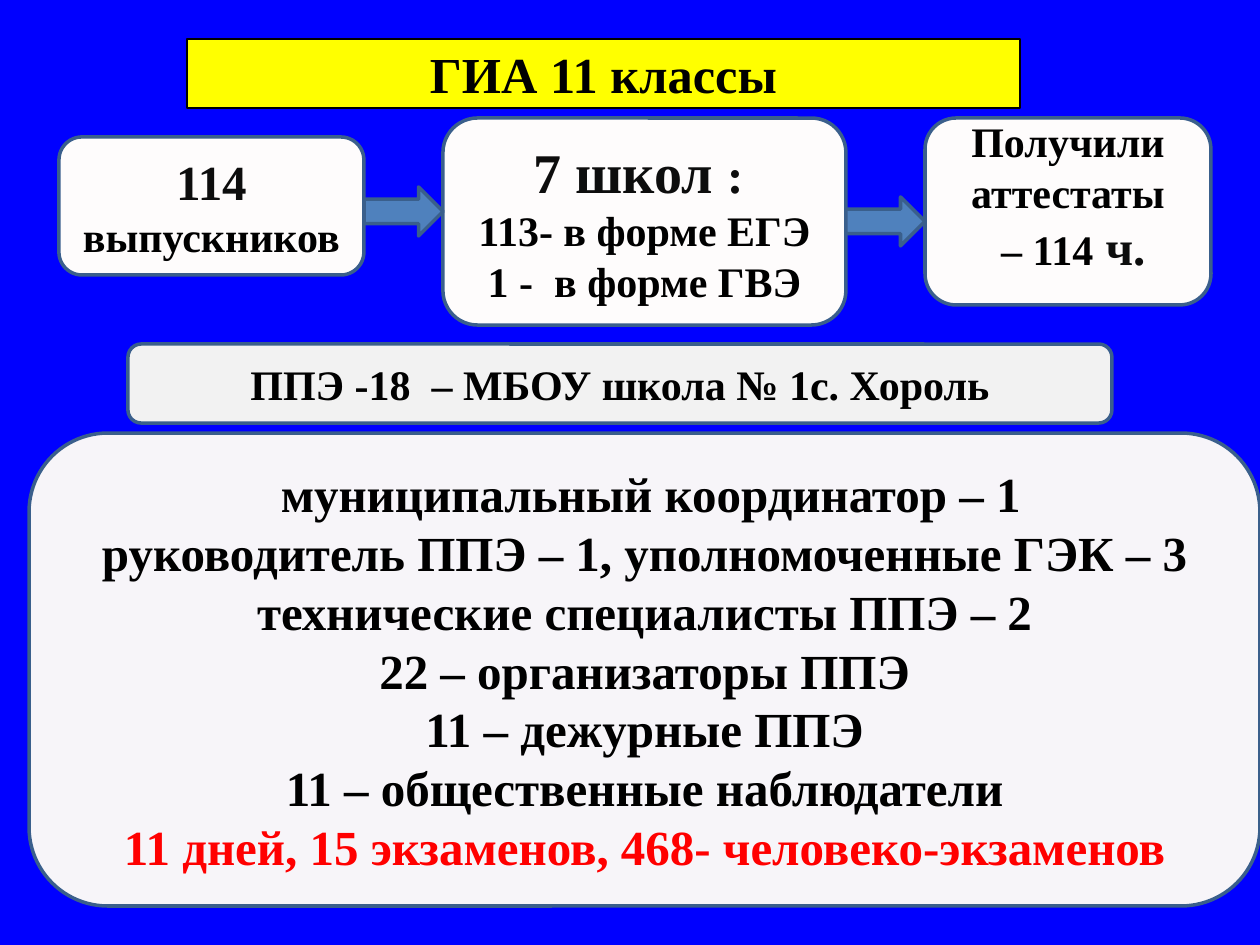
import dataclasses

import pptx
import pptx.dml.color
import pptx.enum.shapes
import pptx.enum.text
import pptx.util

SHAPES = pptx.enum.shapes.MSO_SHAPE
PX_PER_INCH = 126


def px(length):
    return pptx.util.Emu(round(length * 914400 / PX_PER_INCH))


def rgb(code):
    return pptx.dml.color.RGBColor.from_string(code)


@dataclasses.dataclass(frozen=True)
class Theme:
    font: str = "Times New Roman"
    background: str = "0000FF"
    banner: str = "FFFF00"
    card: str = "FEFCFC"
    venue: str = "F2F2F2"
    staff: str = "F7F5F9"
    arrow: str = "4F81BD"
    outline: str = "3A5F8C"
    ink: str = "000000"
    soft_ink: str = "0D0D0D"
    accent: str = "FF0000"
    body: float = 24
    large: float = 28
    heading: float = 28.8
    huge: float = 32


class SlideBuilder:
    def __init__(self, deck, theme):
        self.theme = theme
        self.slide = deck.slides.add_slide(deck.slide_layouts[5])
        self.slide.background.fill.solid()
        self.slide.background.fill.fore_color.rgb = rgb(theme.background)

    def paint(self, shape, fill, line, width):
        shape.fill.solid()
        shape.fill.fore_color.rgb = rgb(fill)
        shape.line.color.rgb = rgb(line)
        shape.line.width = pptx.util.Pt(width)

    def set_lines(self, shape, lines):
        frame = shape.text_frame
        frame.word_wrap = True
        frame.auto_size = pptx.enum.text.MSO_AUTO_SIZE.NONE
        frame.vertical_anchor = pptx.enum.text.MSO_ANCHOR.MIDDLE
        frame.text = "\n".join("" for _ in lines)
        for paragraph, pieces in zip(frame.paragraphs, lines):
            paragraph.alignment = pptx.enum.text.PP_ALIGN.CENTER
            for words, size, color in pieces:
                run = paragraph.add_run()
                run.text = words
                run.font.name = self.theme.font
                run.font.size = pptx.util.Pt(size)
                run.font.bold = True
                run.font.color.rgb = rgb(color)

    def title(self, words, left, top, width, height):
        banner = self.slide.shapes.title
        banner.left, banner.top = px(left), px(top)
        banner.width, banner.height = px(width), px(height)
        self.paint(banner, self.theme.banner, self.theme.ink, 0.75)
        self.set_lines(banner, [[(words, self.theme.heading, self.theme.ink)]])

    def shape(self, preset, fill, left, top, width, height):
        shape = self.slide.shapes.add_shape(
            preset, px(left), px(top), px(width), px(height))
        shape.shadow.inherit = False
        self.paint(shape, fill, self.theme.outline, 2)
        return shape

    def card(self, lines, fill, left, top, width, height):
        card = self.shape(SHAPES.ROUNDED_RECTANGLE, fill, left, top, width, height)
        self.set_lines(card, lines)
        return card

    def arrow(self, left, top):
        self.shape(SHAPES.RIGHT_ARROW, self.theme.arrow, left, top, 79, 49)


def main():
    deck = pptx.Presentation()
    deck.slide_width, deck.slide_height = px(1260), px(945)
    theme = Theme()
    page = SlideBuilder(deck, theme)

    page.title("ГИА 11 классы", 187, 39, 833, 69)

    page.card([
        [("7 школ ", theme.huge, theme.soft_ink), (": ", theme.large, theme.soft_ink)],
        [("113- в форме ЕГЭ", theme.body, theme.ink)],
        [("1 -  в форме ГВЭ", theme.body, theme.ink)],
    ], theme.card, 443, 118, 403, 207)
    page.card([
        [("114 ", theme.large, theme.soft_ink), ("выпускников", theme.body, theme.ink)],
    ], theme.card, 59, 137, 305, 138)
    page.card([
        [("ППЭ -18  – МБОУ школа № 1с. Хороль", theme.body, theme.ink)],
    ], theme.venue, 128, 344, 984, 79)

    staff = [
        " муниципальный координатор – 1",
        "руководитель ППЭ – 1, уполномоченные ГЭК – 3",
        "технические специалисты ППЭ – 2",
        "22 – организаторы ППЭ",
        "11 – дежурные ППЭ",
        "11 – общественные наблюдатели",
    ]
    totals = "11 дней, 15 экзаменов, 468- человеко-экзаменов"
    page.card(
        [[(line, theme.large, theme.ink)] for line in staff]
        + [[(totals, theme.large, theme.accent)]],
        theme.staff, 29, 433, 1231, 473)

    page.arrow(364, 187)
    certificates = page.card([
        [("Получили аттестаты", theme.body, theme.ink)],
        [(" – 114", theme.body, theme.ink), (" ч.", theme.large, theme.soft_ink)],
    ], theme.card, 925, 118, 286, 187)
    certificates.text_frame.margin_bottom = px(38)
    page.arrow(846, 197)

    deck.save("out.pptx")


if __name__ == "__main__":
    main()
